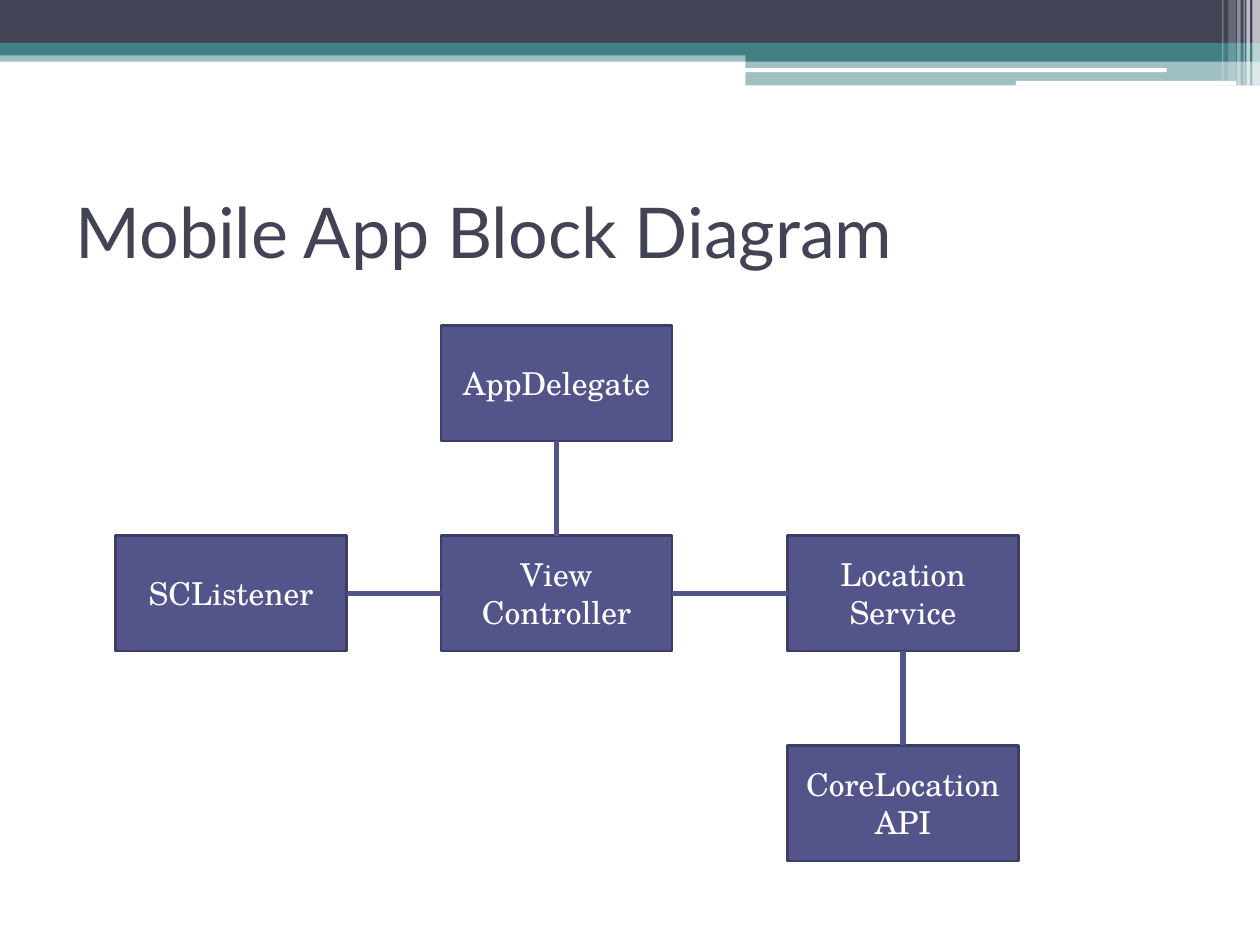
from lxml.etree import SubElement
from pptx import Presentation
from pptx.dml.color import RGBColor
from pptx.enum.shapes import MSO_CONNECTOR, MSO_SHAPE
from pptx.enum.text import MSO_ANCHOR, MSO_AUTO_SIZE, PP_ALIGN
from pptx.oxml.ns import qn
from pptx.util import Pt

SLATE, TEAL, WHITE = "424456", "438086", "FFFFFF"
INDIGO, INDIGO_EDGE = "53548A", "3D3E66"

# left, top, width, height, colour, opacity in percent
HEADER_BANDS = [
    (0, 28.8, 720, 6.5, TEAL, 50),
    (0, 0, 720, 24.5, SLATE, 100),
    (0, 24.5, 720, 7.2, TEAL, 100),
    (426, 28.1, 294, 7.2, TEAL, 100),
    (426, 35, 294, 13.8, TEAL, 50),
]
HEADER_RULES = [
    (425.5, 39, 241.2, 2.2, WHITE, 100),
    (580.5, 46.2, 126, 2.7, WHITE, 100),
]
# left, width, height, opacity in percent
EDGE_STRIPES = [
    (715.7, 4.3, 48.8, 65),
    (712.2, 2, 48.8, 65),
    (710.6, 0.7, 48.8, 60),
    (707, 2, 48.8, 40),
    (702, 4.3, 46.2, 20),
    (698.4, 0.7, 46.2, 30),
]

BLOCK_WIDTH, BLOCK_HEIGHT = 132, 66
COLUMN_LEFTS = [66, 252, 450]
FIRST_ROW_TOP, ROW_STEP = 186, 120
# label: (column, row)
BLOCKS = {
    "AppDelegate": (1, 0),
    "View Controller": (1, 1),
    "SCListener": (0, 1),
    "Location Service": (2, 1),
    "CoreLocation API": (2, 2),
}
TOP, LEFT, BOTTOM, RIGHT = range(4)  # connection sites of a rectangle
LINKS = [
    ("AppDelegate", BOTTOM, "View Controller", TOP),
    ("View Controller", RIGHT, "Location Service", LEFT),
    ("Location Service", BOTTOM, "CoreLocation API", TOP),
    ("View Controller", LEFT, "SCListener", RIGHT),
]


def color(hex_string):
    return RGBColor.from_string(hex_string)


def write(shape, text, *, font, size, ink, align=PP_ALIGN.LEFT):
    frame = shape.text_frame
    frame.text = text
    frame.word_wrap = True
    frame.auto_size = MSO_AUTO_SIZE.NONE
    frame.vertical_anchor = MSO_ANCHOR.MIDDLE
    paragraph = frame.paragraphs[0]
    paragraph.alignment = align
    style = paragraph.runs[0].font
    style.name, style.size = font, Pt(size)
    style.color.rgb = color(ink)


def add_band(slide, left, top, width, height, fill, opacity=100,
             kind=MSO_SHAPE.RECTANGLE):
    """Add a borderless filled shape, see-through when opacity is below 100."""
    band = slide.shapes.add_shape(kind, Pt(left), Pt(top), Pt(width), Pt(height))
    band.shadow.inherit = False
    band.fill.solid()
    band.fill.fore_color.rgb = color(fill)
    band.line.fill.background()
    if opacity < 100:
        tint = band.fill._xPr.find(f"{qn('a:solidFill')}/{qn('a:srgbClr')}")
        SubElement(tint, qn("a:alpha"), val=str(opacity * 1000))
    return band


def add_header(slide):
    for band in HEADER_BANDS:
        add_band(slide, *band)
    for rule in HEADER_RULES:
        add_band(slide, *rule, kind=MSO_SHAPE.ROUNDED_RECTANGLE)
    for left, width, height, opacity in EDGE_STRIPES:
        add_band(slide, left, 0, width, height, WHITE, opacity)


def add_title(slide, text):
    title = slide.shapes.title
    title.left, title.top, title.width, title.height = Pt(36), Pt(90), Pt(648), Pt(84)
    write(title, text, font="Lato", size=40, ink=SLATE)


def add_block(slide, label, column, row):
    block = add_band(slide, COLUMN_LEFTS[column], FIRST_ROW_TOP + row * ROW_STEP,
                     BLOCK_WIDTH, BLOCK_HEIGHT, INDIGO)
    block.line.color.rgb = color(INDIGO_EDGE)
    block.line.width = Pt(1.5)
    write(block, label, font="TeX Gyre Schola", size=18, ink=WHITE,
          align=PP_ALIGN.CENTER)
    return block


def add_link(slide, start, start_site, end, end_site):
    link = slide.shapes.add_connector(MSO_CONNECTOR.STRAIGHT, 0, 0, 0, 0)
    link.begin_connect(start, start_site)
    link.end_connect(end, end_site)
    link.line.color.rgb = color(INDIGO)
    link.line.width = Pt(3)
    SubElement(link._element.spPr, qn("a:effectLst"))


def main():
    deck = Presentation()
    deck.slide_width, deck.slide_height = Pt(720), Pt(540)
    slide = deck.slides.add_slide(deck.slide_layouts.get_by_name("Title Only"))
    add_header(slide)
    add_title(slide, "Mobile App Block Diagram")
    blocks = {label: add_block(slide, label, *cell) for label, cell in BLOCKS.items()}
    for start, start_site, end, end_site in LINKS:
        add_link(slide, blocks[start], start_site, blocks[end], end_site)
    deck.save("out.pptx")


if __name__ == "__main__":
    main()
